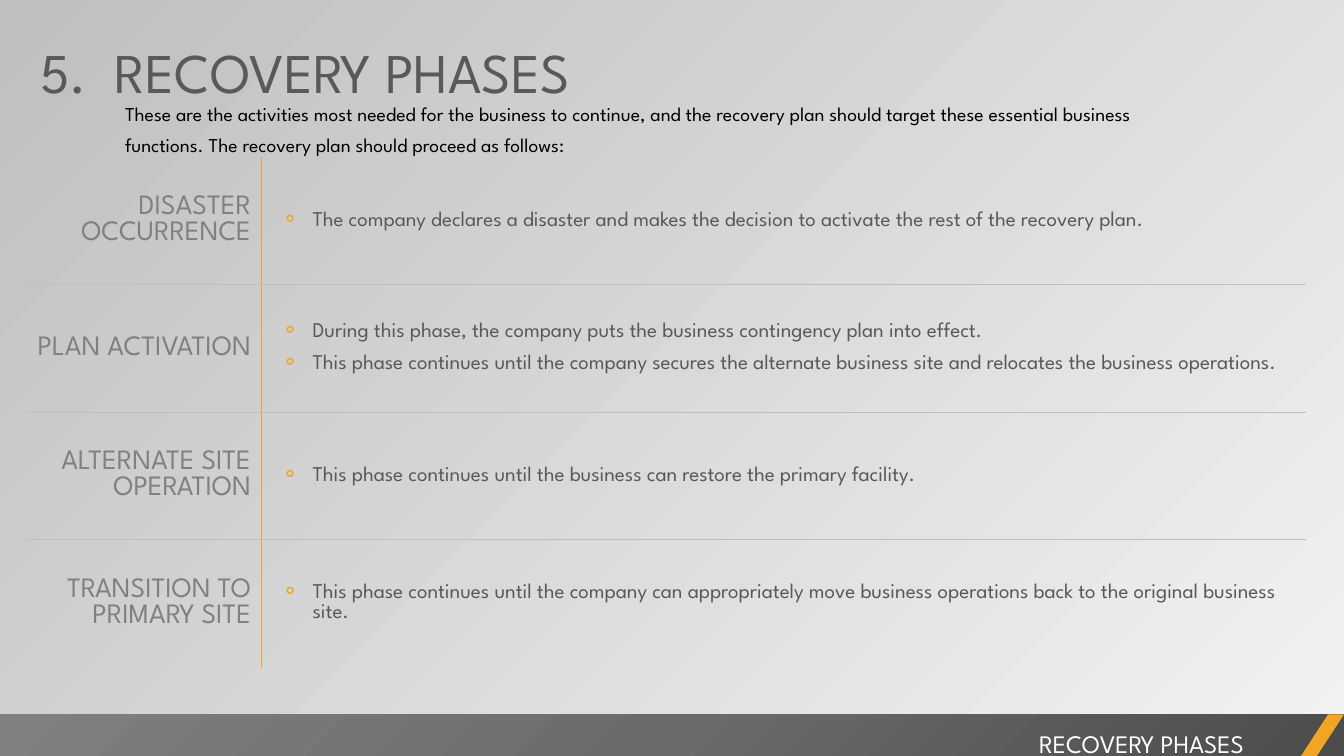
from lxml import etree
from pptx import Presentation
from pptx import util as u
from pptx.dml.color import RGBColor
from pptx.enum import shapes, text
from pptx.oxml import parse_xml
from pptx.oxml.ns import nsdecls, qn

WIDTH, HEIGHT = u.Inches(13.33), u.Inches(7.5)
FONT = "League Spartan"
LINE_SPACING = 1.33
COLORS = {
    "title": "595959", "label": "808080", "intro": "000000", "white": "FFFFFF",
    "accent": "F0A622", "rule": "BFBFBF", "light": "F2F2F2",
    "bar_dark": "4C4C4C", "bar_mid": "6B6B6B", "bar_light": "808080",
}
PHASES = [
    ("DISASTER OCCURRENCE", [
        "The company declares a disaster and makes the decision to activate "
        "the rest of the recovery plan."]),
    ("PLAN ACTIVATION", [
        "During this phase, the company puts the business contingency plan into effect.",
        "This phase continues until the company secures the alternate business site "
        "and relocates the business operations."]),
    ("ALTERNATE SITE OPERATION", [
        "This phase continues until the business can restore the primary facility."]),
    ("TRANSITION TO PRIMARY SITE", [
        "This phase continues until the company can appropriately move business "
        "operations back to the original business site."]),
]
INTRO = ("These are the activities most needed for the business to continue, and the "
         "recovery plan should target these essential business functions. "
         "The recovery plan should proceed as follows:")


def rgb(name):
    return RGBColor.from_string(COLORS[name])


def place(shape, left, top, width, height):
    """Position a shape by shares of the slide's size."""
    shape.left, shape.top = int(WIDTH * left), int(HEIGHT * top)
    shape.width, shape.height = int(WIDTH * width), int(HEIGHT * height)


def add_run(paragraph, words, size, color):
    run = paragraph.add_run()
    run.text = words
    run.font.name, run.font.size = FONT, u.Pt(size)
    run.font.color.rgb = rgb(color)


def write_line(shape, words, size, color, align=text.PP_ALIGN.LEFT):
    """Fill a box with one plain paragraph."""
    frame = shape.text_frame
    frame.word_wrap = True
    frame.auto_size = text.MSO_AUTO_SIZE.NONE
    frame.vertical_anchor = text.MSO_ANCHOR.TOP
    paragraph = frame.paragraphs[0]
    props = paragraph._p.get_or_add_pPr()
    props.set("marL", "0")
    props.set("indent", "0")
    etree.SubElement(props, qn("a:buNone"))
    paragraph.alignment = align
    paragraph.line_spacing = LINE_SPACING
    paragraph.space_before = u.Pt(0)
    add_run(paragraph, words, size, color)


def set_gradient(props, stops, direction):
    """Replace the solid fill of a properties element with a gradient."""
    points = "".join(f'<a:gs pos="{share * 1000}"><a:srgbClr val="{COLORS[name]}"/></a:gs>'
                     for share, name in stops)
    gradient = parse_xml(f'<a:gradFill {nsdecls("a")} rotWithShape="1">'
                         f'<a:gsLst>{points}</a:gsLst>{direction}</a:gradFill>')
    props.replace(props.find(qn("a:solidFill")), gradient)


def add_block(slide, kind, color, *share):
    block = slide.shapes.add_shape(kind, 0, 0, 0, 0)
    place(block, *share)
    block.shadow.inherit = False
    block.fill.solid()
    block.fill.fore_color.rgb = rgb(color)
    block.line.fill.background()
    return block


def set_borders(cell, borders):
    """Draw the listed sides of a cell; sides must come in the order L, R, T, B."""
    props = cell._tc.get_or_add_tcPr()
    for index, (side, color, points) in enumerate(borders):
        props.insert(index, parse_xml(
            f'<a:ln{side} {nsdecls("a")} w="{u.Pt(points)}"><a:solidFill>'
            f'<a:srgbClr val="{COLORS[color]}"/></a:solidFill></a:ln{side}>'))


def add_bullet(paragraph, words):
    props = paragraph._p.get_or_add_pPr()
    props.set("marL", str(u.Inches(0.31)))
    props.set("indent", str(-u.Inches(0.31)))
    color = etree.SubElement(props, qn("a:buClr"))
    etree.SubElement(color, qn("a:srgbClr"), val=COLORS["accent"])
    etree.SubElement(props, qn("a:buFont"), typeface=FONT)
    etree.SubElement(props, qn("a:buChar"), char="⚬")
    add_run(paragraph, words, 15, "title")


def add_phase_table(slide):
    last = len(PHASES) - 1
    frame = slide.shapes.add_table(len(PHASES), 2, u.Inches(0.27), u.Inches(1.56),
                                   u.Inches(12.68), u.Inches(5.06))
    table = frame.table
    table.first_row = table.horz_banding = False
    # The plain style without grid lines
    table._tbl.tblPr.find(qn("a:tableStyleId")).text = "{2D5ABB26-0587-4C30-8999-92F81FD0307C}"
    table.columns[0].width, table.columns[1].width = u.Inches(2.32), u.Inches(10.36)

    for row, (phase, activities) in enumerate(PHASES):
        rules = [("T", "rule", 0.5)] * (row > 0) + [("B", "rule", 0.5)] * (row < last)
        for column, side in enumerate("RL"):
            cell = table.cell(row, column)
            cell.vertical_anchor = text.MSO_ANCHOR.MIDDLE
            cell.fill.background()
            set_borders(cell, [(side, "accent", 1)] + rules)

        label = table.cell(row, 0).text_frame.paragraphs[0]
        label.alignment = text.PP_ALIGN.RIGHT
        add_run(label, phase, 20, "label")

        details = table.cell(row, 1)
        details.margin_left = u.Inches(0.2)
        for index, activity in enumerate(activities):
            body = details.text_frame
            paragraph = body.add_paragraph() if index else body.paragraphs[0]
            if index:
                paragraph.space_before = u.Pt(9)
            add_bullet(paragraph, activity)


def main():
    deck = Presentation()
    deck.slide_width, deck.slide_height = WIDTH, HEIGHT
    slide = deck.slides.add_slide(deck.slide_layouts[1])

    # Background
    slide.background.fill.solid()
    set_gradient(slide._element.find(".//" + qn("p:bgPr")),
                 [(0, "light"), (100, "rule")], '<a:lin ang="13500000" scaled="0"/>')

    # Footer bar with accent and section name
    bar = add_block(slide, shapes.MSO_SHAPE.RECTANGLE, "bar_mid", 0, 0.945, 1, 0.055)
    set_gradient(bar._element.spPr,
                 [(0, "bar_dark"), (50, "bar_mid"), (100, "bar_light")],
                 '<a:path path="circle"><a:fillToRect l="100000" t="100000"/></a:path>'
                 '<a:tileRect r="-100000" b="-100000"/>')
    accent = add_block(slide, shapes.MSO_SHAPE.PARALLELOGRAM, "accent",
                       0.968, 0.945, 0.032, 0.055)
    accent.adjustments[0] = 0.65
    section = slide.shapes.add_textbox(0, 0, 0, 0)
    place(section, 0.394, 0.944, 0.539, 0.053)
    write_line(section, "RECOVERY PHASES", 18, "white", text.PP_ALIGN.RIGHT)

    # Title and introduction
    title, intro = slide.placeholders
    place(title, 0.0225, 0.0133, 0.934, 0.103)
    write_line(title, "5.  RECOVERY PHASES", 40, "title")
    place(intro, 0.0855, 0.1173, 0.808, 0.076)
    write_line(intro, INTRO, 14, "intro")

    # Recovery phases
    add_phase_table(slide)
    deck.save("out.pptx")


if __name__ == "__main__":
    main()
